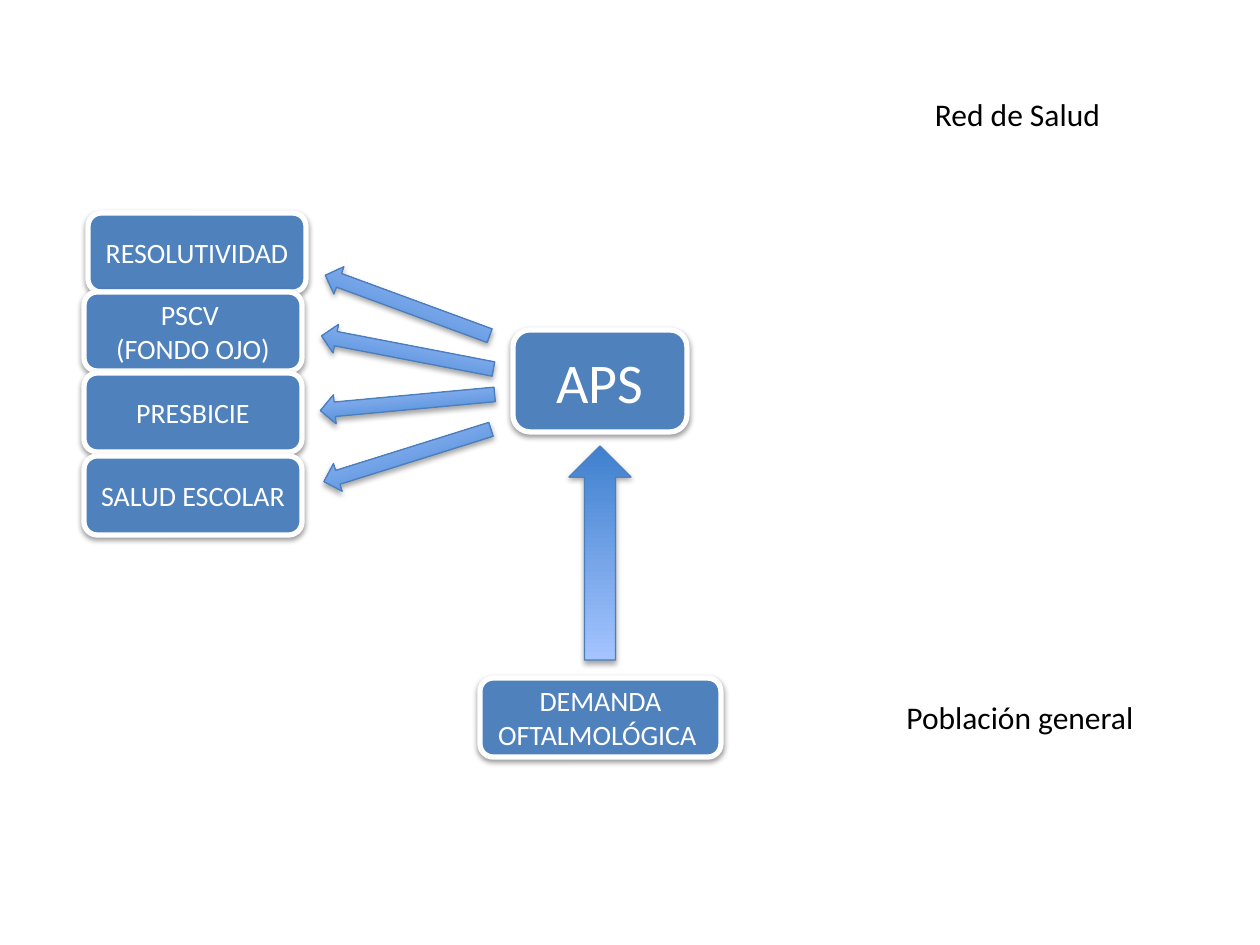
from lxml import etree
from pptx import Presentation, util as u
from pptx.dml.color import RGBColor
from pptx.enum import shapes, text
from pptx.oxml import ns

SCALE = 914400 / 126


def px(length):
    return u.Emu(round(length * SCALE))


def color(code):
    return RGBColor.from_string(code)


class Diagram:
    font = "Calibri"
    box_fill, box_line = "4F81BD", "FFFFFF"
    arrow_dark, arrow_light, arrow_line = "3F80CE", "A4C4FF", "4B7EBC"

    def __init__(self, slide):
        self.slide = slide

    def shadow(self, shape, distance, opacity):
        shape.shadow.inherit = False
        effects = shape._element.spPr.find(ns.qn("a:effectLst"))
        outer = etree.SubElement(effects, ns.qn("a:outerShdw"), blurRad="40000",
                                 dist=str(distance), dir="5400000", rotWithShape="0")
        black = etree.SubElement(outer, ns.qn("a:srgbClr"), val="000000")
        etree.SubElement(black, ns.qn("a:alpha"), val=str(opacity * 1000))

    def add_lines(self, frame, lines, size, ink):
        frame.word_wrap = True
        for index, line in enumerate(lines):
            paragraph = frame.add_paragraph() if index else frame.paragraphs[0]
            paragraph.alignment = text.PP_ALIGN.CENTER
            run = paragraph.add_run()
            run.text = line
            run.font.name = self.font
            run.font.size = u.Pt(size)
            run.font.color.rgb = color(ink)

    def box(self, place, lines, size=16):
        shape = self.slide.shapes.add_shape(
            shapes.MSO_SHAPE.ROUNDED_RECTANGLE, *map(px, place))
        shape.fill.solid()
        shape.fill.fore_color.rgb = color(self.box_fill)
        shape.line.color.rgb = color(self.box_line)
        shape.line.width = u.Pt(3)
        self.shadow(shape, 20000, 38)
        shape.text_frame.vertical_anchor = text.MSO_ANCHOR.MIDDLE
        self.add_lines(shape.text_frame, lines, size, "FFFFFF")

    def arrow(self, kind, place, rotation):
        shape = self.slide.shapes.add_shape(kind, *map(px, place))
        shape.rotation = rotation
        shape.fill.gradient()
        shape.fill.gradient_angle = 90
        stops = zip(shape.fill.gradient_stops, (self.arrow_dark, self.arrow_light))
        for position, (stop, shade) in enumerate(stops):
            stop.position = position
            stop.color.rgb = color(shade)
        shape.line.color.rgb = color(self.arrow_line)
        shape.line.width = u.Pt(0.75)
        self.shadow(shape, 23000, 35)

    def label(self, place, words):
        frame = self.slide.shapes.add_textbox(*map(px, place)).text_frame
        frame.auto_size = text.MSO_AUTO_SIZE.SHAPE_TO_FIT_TEXT
        self.add_lines(frame, [words], 18, "000000")


def main():
    deck = Presentation()
    deck.slide_width, deck.slide_height = px(1260), px(945)
    diagram = Diagram(deck.slides.add_slide(deck.slide_layouts[6]))

    diagram.box((513, 330, 174, 102), ["APS"], 32)
    diagram.box((480, 678, 241, 79), ["DEMANDA OFTALMOLÓGICA "])
    diagram.arrow(shapes.MSO_SHAPE.DOWN_ARROW, (569, 446, 62, 214), 180)

    programs = [
        (88, 213, ["RESOLUTIVIDAD"]),
        (84, 292, ["PSCV ", "(FONDO OJO)"]),
        (84, 373, ["PRESBICIE"]),
        (84, 456, ["SALUD ESCOLAR"]),
    ]
    for left, top, lines in programs:
        diagram.box((left, top, 218, 79), lines)

    for top, rotation in [(291, 20.2), (338, 10.9), (388, 354.7), (441, 342.6)]:
        diagram.arrow(shapes.MSO_SHAPE.LEFT_ARROW, (320, top, 175, 29), rotation)

    diagram.label((887, 692, 266, 50), "Población general")
    diagram.label((898, 89, 239, 50), "Red de Salud")

    deck.save("out.pptx")


if __name__ == "__main__":
    main()
